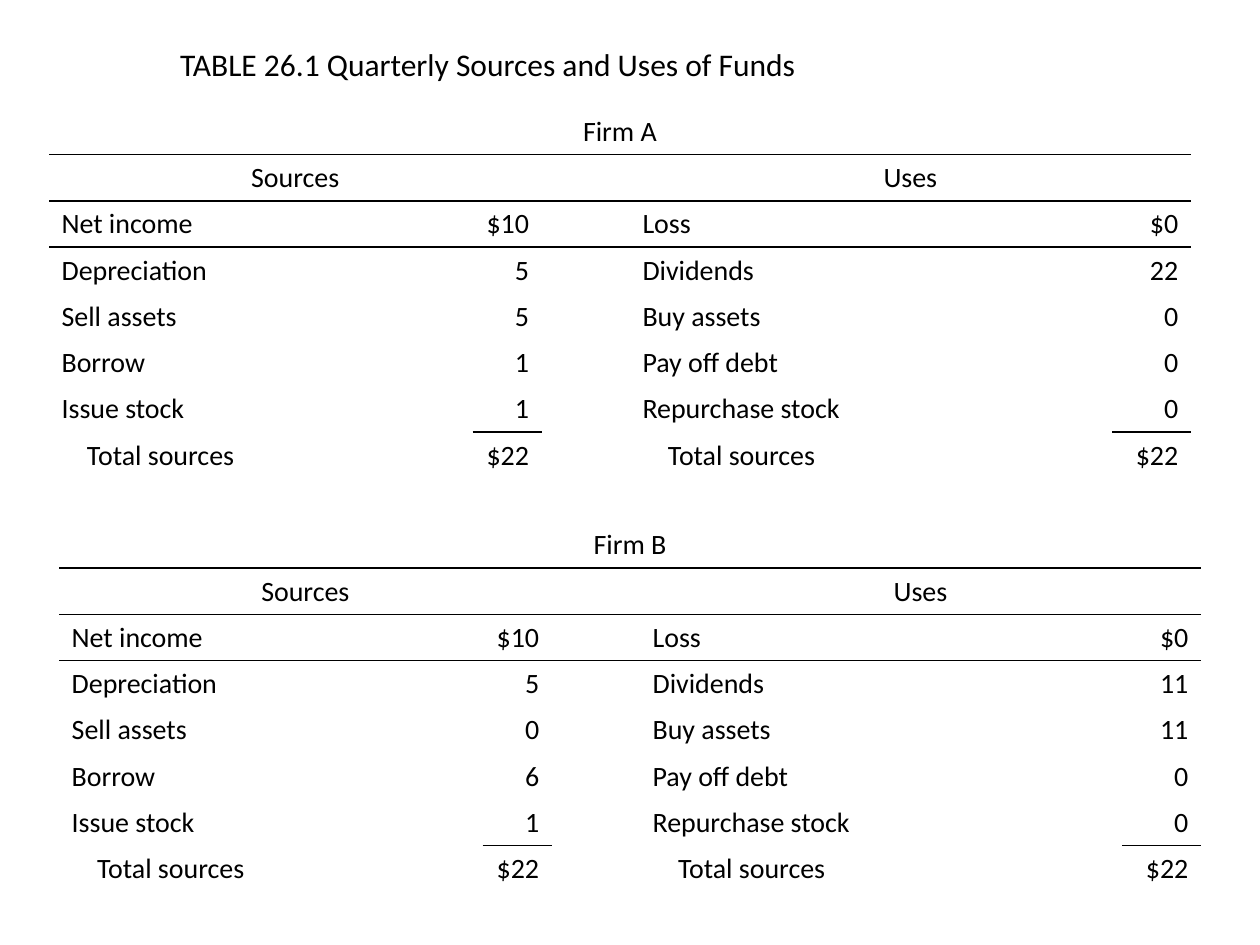
from dataclasses import dataclass

from lxml.etree import SubElement as Sub
from pptx import Presentation
from pptx.dml.color import RGBColor as RGB
from pptx.enum.text import MSO_AUTO_SIZE as Auto, PP_ALIGN as Align
from pptx.oxml.ns import qn
from pptx.util import Pt


@dataclass(frozen=True)
class Theme:
    font: str = "Calibri"
    ink: str = "000000"
    title: float = 18
    body: float = 16
    rule: float = 1


T = Theme()
COLS = [242, 39.5, 50.5, 275.5, 45]
ROW_H = 26.4
INDENT = 14.5
NO_STYLE = "{2D5ABB26-0587-4C30-8999-92F81FD0307C}"
SOURCES = ["Net income", "Depreciation", "Sell assets", "Borrow", "Issue stock", "Total sources"]
USES = ["Loss", "Dividends", "Buy assets", "Pay off debt", "Repurchase stock", "Total sources"]
FIRMS = [
    ("Firm A", 28, 62,
     ["$10", "5", "5", "1", "1", "$22"], ["$0", "22", "0", "0", "0", "$22"]),
    ("Firm B", 33.8, 298.2,
     ["$10", "5", "0", "6", "1", "$22"], ["$0", "11", "11", "0", "0", "$22"]),
]


def put_text(tf, text, size=T.body, align=Align.LEFT):
    p = tf.paragraphs[0]
    p.alignment = align
    if not text:
        Sub(p._p, qn("a:endParaRPr"), sz=str(int(size * 100)))
        return
    r = p.add_run()
    r.text = text
    r.font.name, r.font.size = T.font, Pt(size)
    r.font.color.rgb = RGB.from_string(T.ink)


def add_rule(cell, side):
    ln = Sub(cell._tc.get_or_add_tcPr(), qn(f"a:ln{side}"), w=str(Pt(T.rule)))
    Sub(Sub(ln, qn("a:solidFill")), qn("a:srgbClr"), val=T.ink)


def has_rule_below(row, col, last):
    return row in (0, 1) or (row == last - 1 and col in (1, 4))


def add_title(s, text, x, y, w, h):
    tf = s.shapes.add_textbox(Pt(x), Pt(y), Pt(w), Pt(h)).text_frame
    tf.word_wrap = True
    tf.auto_size = Auto.SHAPE_TO_FIT_TEXT
    put_text(tf, text, size=T.title)


def add_firm_table(s, firm, x, y, sources, uses):
    rows = [[firm, "", "", "", ""], ["Sources", "", "", "Uses", ""]]
    rows += [[a, b, "", c, d] for a, b, c, d in zip(SOURCES, sources, USES, uses)]
    last = len(rows) - 1
    tbl = s.shapes.add_table(len(rows), len(COLS), Pt(x), Pt(y),
                             Pt(sum(COLS)), Pt(ROW_H * len(rows))).table
    tbl.first_row = tbl.horz_banding = False
    tbl._tbl.tblPr.find(qn("a:tableStyleId")).text = NO_STYLE
    for col, w in zip(tbl.columns, COLS):
        col.width = Pt(w)
    for i, row in enumerate(rows):
        tbl.rows[i].height = Pt(ROW_H)
        for j, text in enumerate(row):
            cell = tbl.cell(i, j)
            if i and has_rule_below(i - 1, j, last):
                add_rule(cell, "T")
            if has_rule_below(i, j, last):
                add_rule(cell, "B")
            cell.fill.background()
            align = Align.CENTER if i < 2 else Align.RIGHT if j in (1, 4) else Align.LEFT
            put_text(cell.text_frame, text, align=align)
            if i == last and j in (0, 3):
                cell.margin_left = Pt(7.2 + INDENT)
    for start, end in [((0, 0), (0, 4)), ((1, 0), (1, 1)), ((1, 3), (1, 4))]:
        tbl.cell(*start).merge(tbl.cell(*end))


def main():
    prs = Presentation()
    prs.slide_width, prs.slide_height = Pt(720), Pt(540)
    s = prs.slides.add_slide(prs.slide_layouts[6])
    add_title(s, "TABLE 26.1 Quarterly Sources and Uses of Funds", 95.8, 22.3, 438.5, 29)
    for firm in FIRMS:
        add_firm_table(s, *firm)
    prs.save("out.pptx")


if __name__ == "__main__":
    main()
